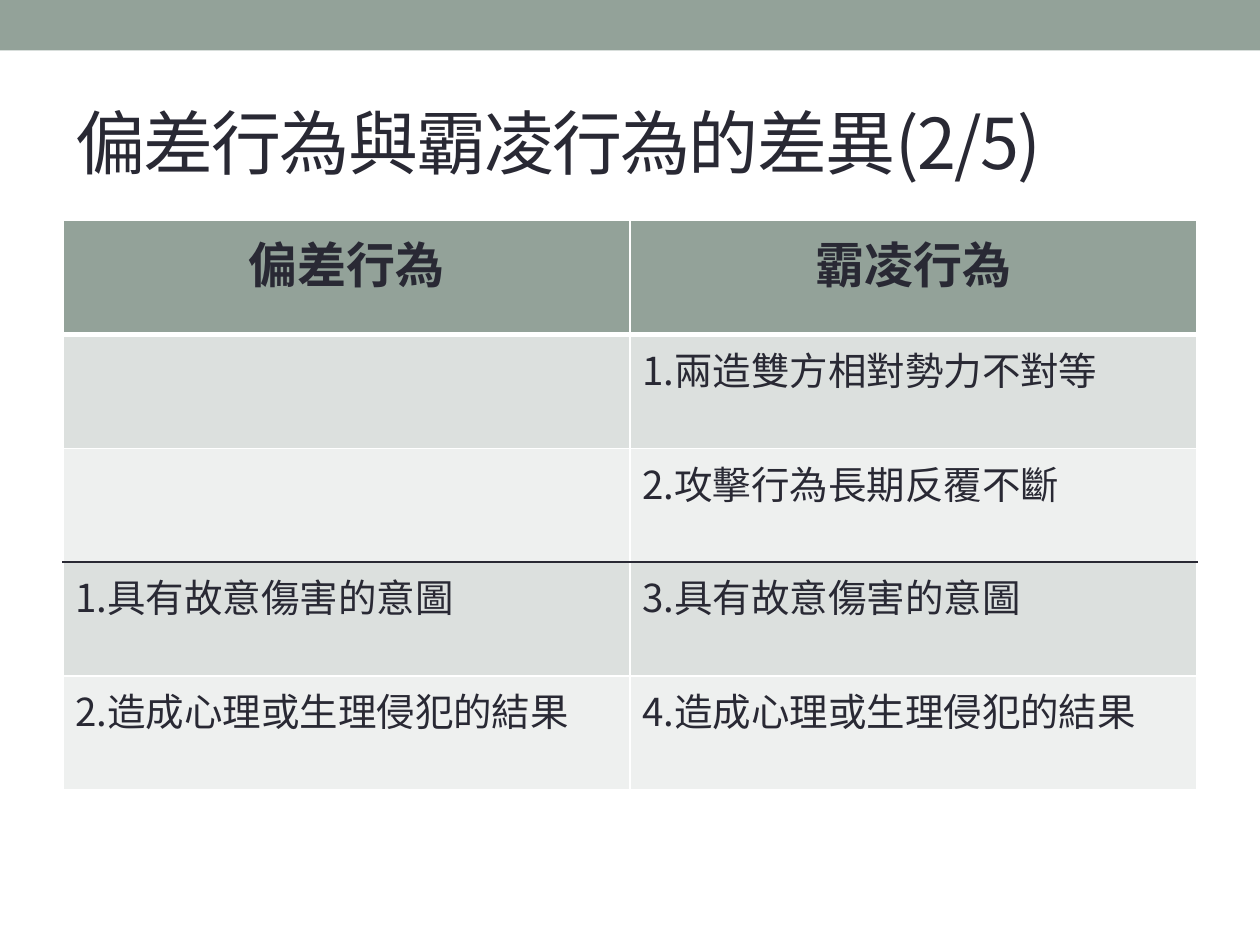
import pptx
import pptx.util
import pptx.dml.color
import pptx.enum.shapes
import pptx.enum.text
import pptx.oxml
import pptx.oxml.ns

Inches = pptx.util.Inches
FONT = "Noto Sans CJK SC"
SAGE, INK, WHITE = "93A299", "292934", "FFFFFF"
BANDS = ["DCE0DE", "EEF0EF"]
ROWS = [
    ("偏差行為", "霸凌行為"),
    ("", "1.兩造雙方相對勢力不對等"),
    ("", "2.攻擊行為長期反覆不斷"),
    ("1.具有故意傷害的意圖", "3.具有故意傷害的意圖"),
    ("2.造成心理或生理侵犯的結果", "4.造成心理或生理侵犯的結果"),
]
RULES = [(WHITE, 1), (WHITE, 3), (WHITE, 1), (INK, 1), (WHITE, 1), (WHITE, 1)]


def color(value):
    return pptx.dml.color.RGBColor.from_string(value)


def style(p, size, bold=False):
    font = p.font
    font.size = pptx.util.Pt(size)
    font.bold = bold
    font.color.rgb = color(INK)
    font.name = FONT
    ea = pptx.oxml.parse_xml(
        f'<a:ea {pptx.oxml.ns.nsdecls("a")} typeface="{FONT}"/>')
    p._p.pPr.find(pptx.oxml.ns.qn("a:defRPr")).append(ea)


def set_borders(cell, top, bottom):
    tcPr = cell._tc.get_or_add_tcPr()
    sides = [("L", (WHITE, 1)), ("R", (WHITE, 1)), ("T", top), ("B", bottom)]
    for i, (side, (value, width)) in enumerate(sides):
        tcPr.insert(i, pptx.oxml.parse_xml(
            f'<a:ln{side} {pptx.oxml.ns.nsdecls("a")} w="{pptx.util.Pt(width)}">'
            f'<a:solidFill><a:srgbClr val="{value}"/></a:solidFill></a:ln{side}>'))


def add_band(s, left, top, width, height):
    band = s.shapes.add_shape(
        pptx.enum.shapes.MSO_SHAPE.RECTANGLE, left, top, width, height)
    band.shadow.inherit = False
    band.fill.solid()
    band.fill.fore_color.rgb = color(SAGE)
    band.line.fill.background()


def add_title(s, left, top, width, height):
    tf = s.shapes.add_textbox(left, top, width, height).text_frame
    tf.word_wrap = True
    tf.vertical_anchor = pptx.enum.text.MSO_ANCHOR.MIDDLE
    p = tf.paragraphs[0]
    r = p.add_run()
    r.text = "偏差行為與霸凌行為的差異(2/5)"
    style(p, 40)
    r._r.get_or_add_rPr().set("spc", "-100")


def add_comparison(s, left, top, width, height):
    table = s.shapes.add_table(
        len(ROWS), len(ROWS[0]), left, top, width, height).table
    for i, texts in enumerate(ROWS):
        header = i == 0
        for j, text in enumerate(texts):
            cell = table.cell(i, j)
            cell.fill.solid()
            cell.fill.fore_color.rgb = color(SAGE if header else BANDS[(i - 1) % 2])
            set_borders(cell, RULES[i], RULES[i + 1])
            cell.text = text
            p = cell.text_frame.paragraphs[0]
            if header:
                p.alignment = pptx.enum.text.PP_ALIGN.CENTER
            style(p, 28 if header else 22, header)


def main():
    prs = pptx.Presentation()
    prs.slide_width, prs.slide_height = Inches(10), Inches(7.5)
    s = prs.slides.add_slide(prs.slide_layouts[6])
    add_band(s, 0, 0, prs.slide_width, Inches(0.4))
    add_title(s, Inches(0.5), Inches(0.58), Inches(9), Inches(1.08))
    add_comparison(s, Inches(0.5), Inches(1.75), Inches(9), Inches(4.52))
    prs.save("out.pptx")


if __name__ == "__main__":
    main()
